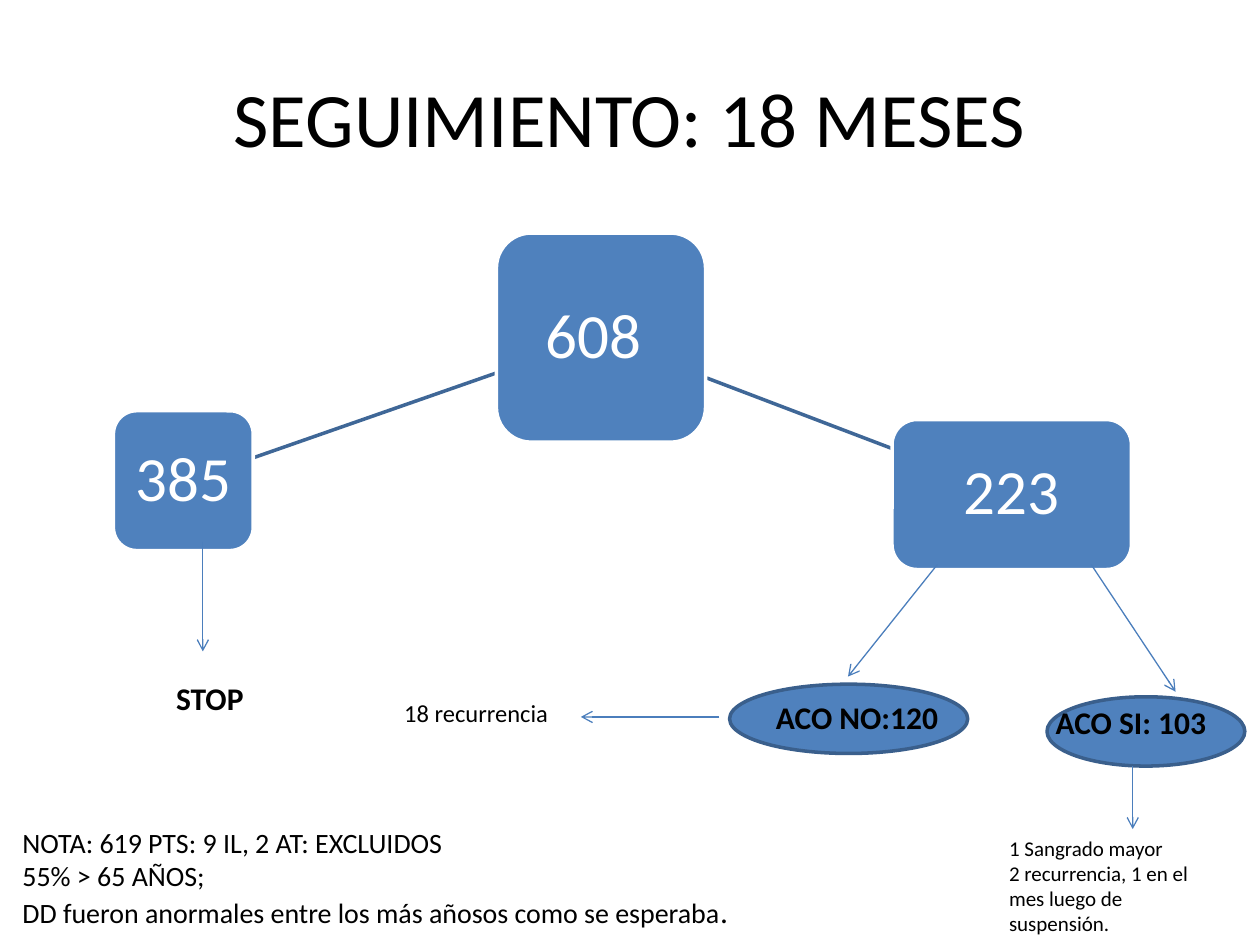
from lxml import etree
from pptx import Presentation
from pptx import util as u
from pptx.dml.color import RGBColor
from pptx.enum import shapes, text
from pptx.oxml import ns

PX = 9144
FONT = "Calibri"
BLACK = RGBColor(0x00, 0x00, 0x00)
WHITE = RGBColor(0xFF, 0xFF, 0xFF)
BLUE = RGBColor(0x4F, 0x81, 0xBD)
LINK = RGBColor(0x3F, 0x67, 0x97)
ARROW = RGBColor(0x4B, 0x7E, 0xBC)
RIM = RGBColor(0x3A, 0x5F, 0x8C)


def place(box, x, y, w, h):
    return [u.Emu(n * PX) for n in (box[0] + x, box[1] + y, w, h)]


def add_run(para, words, size, color=BLACK, bold=False):
    run = para.add_run()
    run.text = words
    run.font.name = FONT
    run.font.size = u.Pt(size)
    run.font.bold = bold
    run.font.color.rgb = color


def add_label(slide, box, rect, lines, bold=False):
    frame = slide.shapes.add_textbox(*place(box, *rect)).text_frame
    frame.word_wrap = True
    for i, line in enumerate(lines):
        para = frame.add_paragraph() if i else frame.paragraphs[0]
        for words, size in line:
            add_run(para, words, size, bold=bold)


def add_solid(slide, box, rect, kind, rim):
    shape = slide.shapes.add_shape(kind, *place(box, *rect))
    shape.shadow.inherit = False
    shape.fill.solid()
    shape.fill.fore_color.rgb = BLUE
    shape.line.color.rgb = rim
    shape.line.width = u.Pt(2)
    return shape


def add_node(slide, box, rect, words):
    kind = shapes.MSO_SHAPE.ROUNDED_RECTANGLE
    frame = add_solid(slide, box, rect, kind, WHITE).text_frame
    frame.word_wrap = False
    frame.vertical_anchor = text.MSO_ANCHOR.MIDDLE
    para = frame.paragraphs[0]
    para.alignment = text.PP_ALIGN.CENTER
    para.line_spacing = 0.9
    add_run(para, words, 36, WHITE)


def add_line(slide, box, ends, color, width, head=False):
    start, end = place(box, *ends[:2], 0, 0), place(box, *ends[2:], 0, 0)
    line = slide.shapes.add_connector(
        shapes.MSO_CONNECTOR.STRAIGHT, *start[:2], *end[:2])
    line.line.color.rgb = color
    line.line.width = u.Pt(width)
    if head:
        tail = etree.SubElement(line.line._get_or_add_ln(), ns.qn("a:tailEnd"))
        tail.set("type", "arrow")
    etree.SubElement(line._element.spPr, ns.qn("a:effectLst"))


def add_arrow(slide, box, ends):
    add_line(slide, box, ends, ARROW, 0.75, head=True)


def add_title(slide, box):
    title = slide.shapes.title
    title.left, title.top, title.width, title.height = place(box, 0, 0, 900, 125)
    frame = title.text_frame
    frame.vertical_anchor = text.MSO_ANCHOR.MIDDLE
    para = frame.paragraphs[0]
    para.alignment = text.PP_ALIGN.CENTER
    add_run(para, "SEGUIMIENTO: 18 MESES", 44)


def add_tree(slide, box):
    for ends in ((471, 115, 618, 171), (304, 111, 112, 178)):
        add_line(slide, box, ends, LINK, 2)
    add_node(slide, box, (304, 0, 166, 166), "608 ")
    add_node(slide, box, (618, 148, 190, 119), "223")
    add_node(slide, box, (0, 141, 111, 111), "385")


def add_stop(slide, box):
    add_arrow(slide, box, (31, 0, 31, 87))
    add_label(slide, box, (0, 104, 85, 40), [[("STOP", 18)]], bold=True)


def add_groups(slide, box):
    for rect in ((268, 95, 189, 55), (520, 105, 157, 55)):
        add_solid(slide, box, rect, shapes.MSO_SHAPE.OVAL, RIM)
    for ends in ((433, 0, 362, 89), (555, 0, 622, 101),
                 (260, 121, 150, 121), (588, 160, 588, 210)):
        add_arrow(slide, box, ends)
    add_label(slide, box, (295, 101, 161, 40), [[("ACO NO:120", 18)]], bold=True)
    add_label(slide, box, (517, 105, 170, 40), [[("ACO SI: 103", 18)]], bold=True)
    add_label(slide, box, (0, 101, 169, 34), [[("18 recurrencia", 14)]])
    add_label(slide, box, (480, 210, 188, 91), [
        [("1 Sangrado mayor", 12)],
        [("2 recurrencia, 1 en el mes luego de suspensión.", 12)],
    ])


def add_notes(slide, box):
    add_label(slide, box, (0, 0, 665, 94), [
        [("NOTA: 619 PTS: 9 IL, 2 AT: EXCLUIDOS", 16)],
        [("55% > 65 AÑOS;", 16)],
        [("DD fueron anormales entre los más añosos como se esperaba", 16),
         (".", 18)],
    ])


def main():
    deck = Presentation()
    deck.slide_width, deck.slide_height = u.Emu(1000 * PX), u.Emu(750 * PX)
    slide = deck.slides.add_slide(deck.slide_layouts[5])
    add_title(slide, (50, 30))
    add_tree(slide, (90, 185))
    add_stop(slide, (130, 430))
    add_groups(slide, (311, 448))
    add_notes(slide, (8, 650))
    deck.save("out.pptx")


if __name__ == "__main__":
    main()
